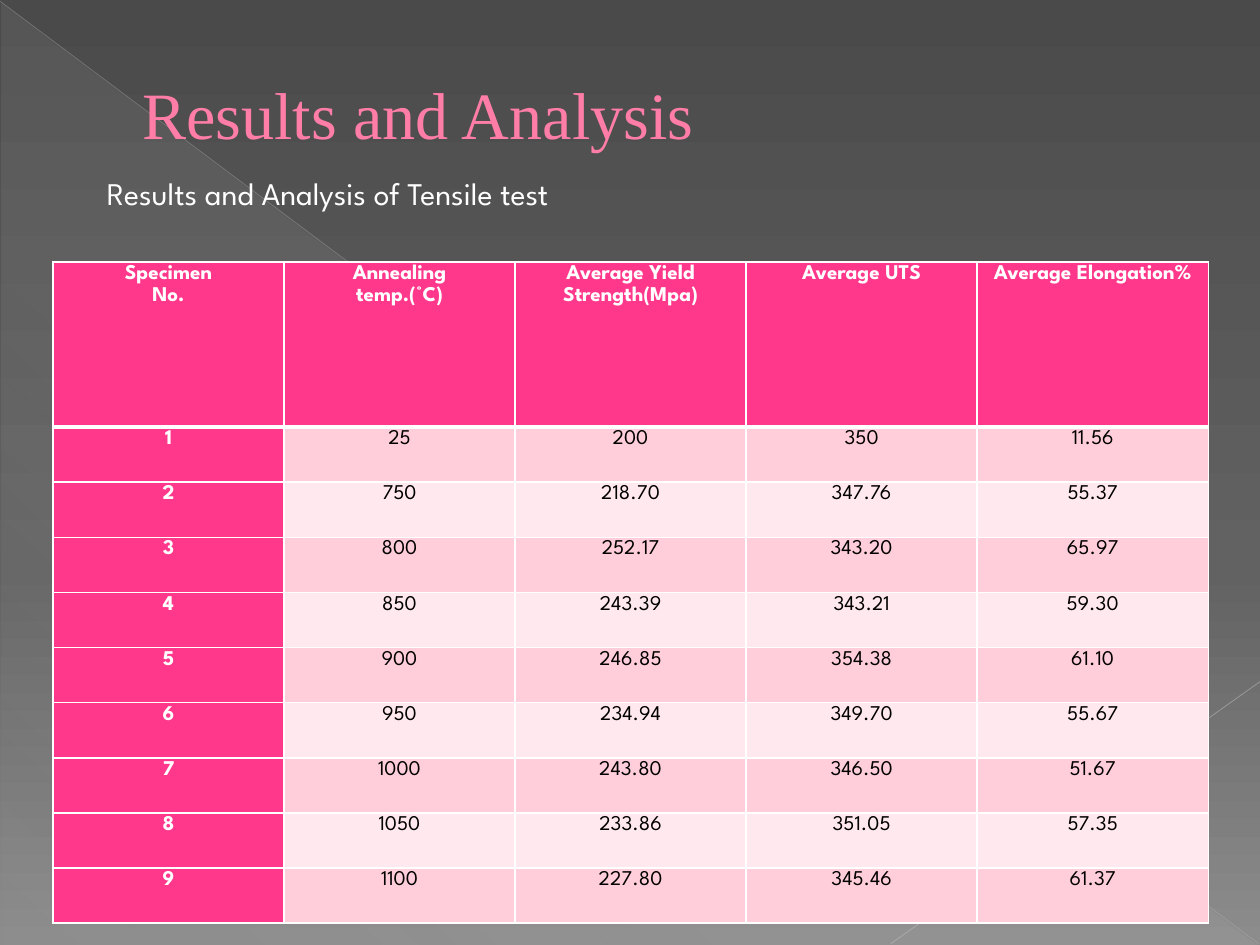
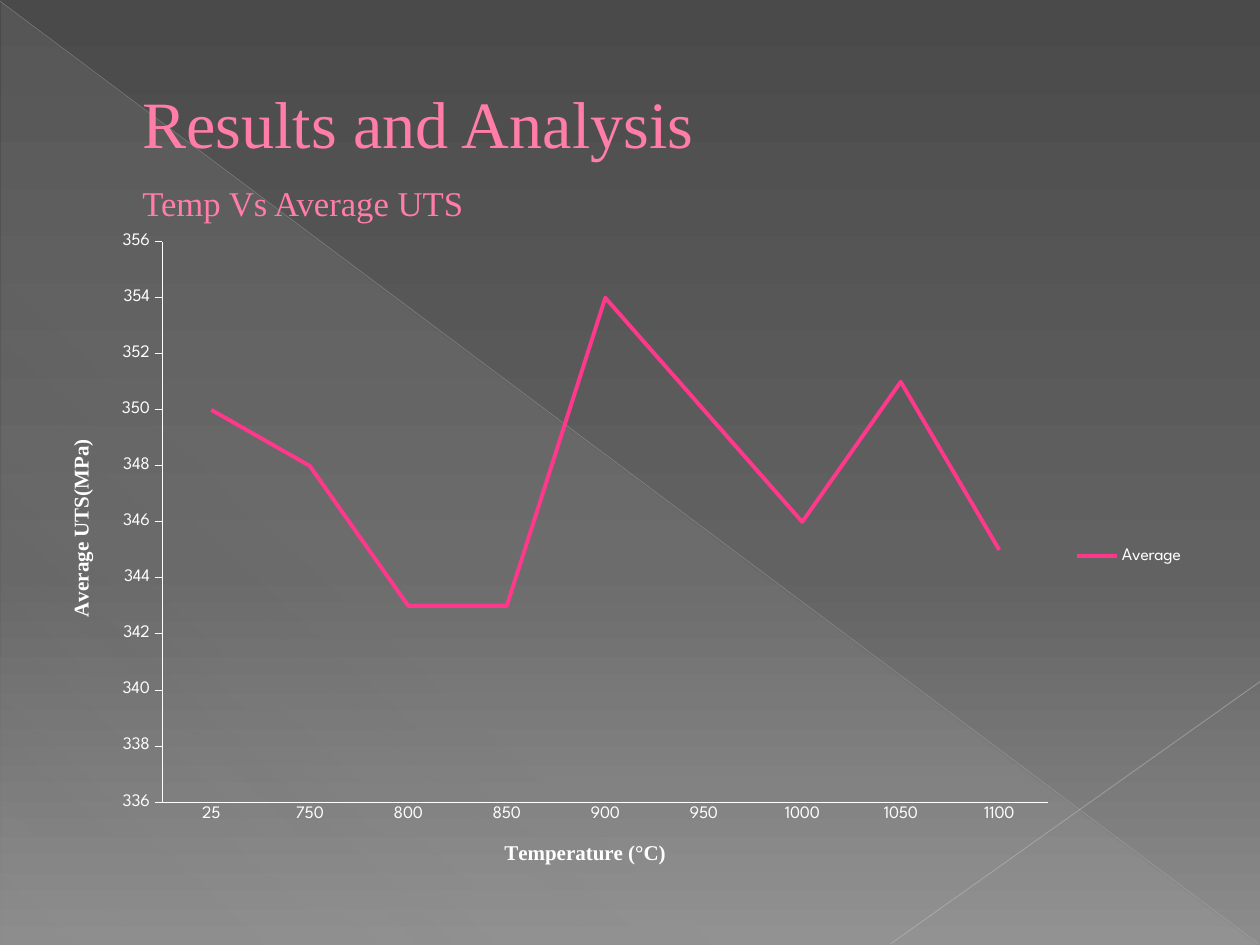
from lxml import etree
from pptx import Presentation
from pptx.chart.data import CategoryChartData
from pptx.dml.color import RGBColor
from pptx.enum.chart import (XL_CHART_TYPE, XL_LEGEND_POSITION, XL_MARKER_STYLE,
                             XL_TICK_MARK)
from pptx.enum.shapes import MSO_CONNECTOR, MSO_SHAPE
from pptx.enum.text import MSO_ANCHOR, MSO_AUTO_SIZE, PP_ALIGN
from pptx.oxml import parse_xml
from pptx.oxml.ns import nsdecls, qn
from pptx.util import Inches, Pt

STRAIGHT = MSO_CONNECTOR.STRAIGHT
RIGHT_TRIANGLE = MSO_SHAPE.RIGHT_TRIANGLE
LINE_CHART = XL_CHART_TYPE.LINE
LEGEND_RIGHT = XL_LEGEND_POSITION.RIGHT
NO_MARKER = XL_MARKER_STYLE.NONE
TICK_NONE, TICK_OUT = XL_TICK_MARK.NONE, XL_TICK_MARK.OUTSIDE
LEFT, CENTER = PP_ALIGN.LEFT, PP_ALIGN.CENTER
TOP, MIDDLE = MSO_ANCHOR.TOP, MSO_ANCHOR.MIDDLE
NO_FIT = MSO_AUTO_SIZE.NONE

COLORS = {
    "white": "FFFFFF", "black": "000000", "pink": "FF388C",
    "title": "FF7DA7", "title_outline": "B12761",
    "band_dark": "FFCEDA", "band_light": "FFE8EE",
    "bg_top": "4A4A4A", "bg_middle": "626262", "bg_bottom": "8C8C8C",
    "sheen": "D2D2D2", "diagonal": "BFBFBF", "corner": "C6C6C6",
}
RGB = {name: RGBColor.from_string(code) for name, code in COLORS.items()}
BODY_FONT, TITLE_FONT = "League Spartan", "Times New Roman"

HEADERS = ["Specimen\nNo.", "Annealing\ntemp.(°C)", "Average Yield\nStrength(Mpa)",
           "Average UTS", "Average Elongation%"]
SPECIMENS = [
    ("1", "25", "200", "350", "11.56"),
    ("2", "750", "218.70", "347.76", "55.37"),
    ("3", "800", "252.17", "343.20", "65.97"),
    ("4", "850", "243.39", "343.21", "59.30"),
    ("5", "900", "246.85", "354.38", "61.10"),
    ("6", "950", "234.94", "349.70", "55.67"),
    ("7", "1000", "243.80", "346.50", "51.67"),
    ("8", "1050", "233.86", "351.05", "57.35"),
    ("9", "1100", "227.80", "345.46", "61.37"),
]
HEADER_HEIGHT, TABLE_HEIGHT = 1.31, 5.25


def set_gradient(fill, owner, stops, angle):
    """Give fill, found inside the XML of owner, stops of (position %, colour, alpha %)."""
    fill.gradient()
    stop_xml = "".join(
        f'<a:gs pos="{pos * 1000}"><a:srgbClr val="{COLORS[color]}">'
        f'<a:alpha val="{alpha * 1000}"/></a:srgbClr></a:gs>'
        for pos, color, alpha in stops)
    old = owner.find(".//" + qn("a:gradFill"))
    old.getparent().replace(old, parse_xml(
        f'<a:gradFill {nsdecls("a")} rotWithShape="1"><a:gsLst>{stop_xml}</a:gsLst>'
        f'<a:lin ang="{angle * 60000}" scaled="0"/></a:gradFill>'))


def style_font(font, **values):
    """Set font attributes; color is a key of COLORS."""
    font.color.rgb = RGB[values.pop("color")]
    for name, value in values.items():
        setattr(font, name, value)


prs = Presentation()
prs.slide_width, prs.slide_height = Inches(10), Inches(7.5)
master = prs.slide_master
slides = [prs.slides.add_slide(prs.slide_layouts[5]) for _ in range(2)]
table_slide, chart_slide = slides

# Shared background, placed on the master
set_gradient(master.background.fill, master.element,
             [(0, "bg_top", 100), (60, "bg_middle", 100), (100, "bg_bottom", 100)], 90)
sheen = table_slide.shapes.add_shape(
    RIGHT_TRIANGLE, Inches(0.01), Inches(0.02), Inches(9.98), Inches(7.48))
sheen.shadow.inherit = False
sheen.line.fill.background()
set_gradient(sheen.fill, sheen.element,
             [(0, "sheen", 10), (70, "sheen", 8), (100, "sheen", 1)], 133)
backdrop = [sheen]
for ends, color, width, alpha in [
    ((0, 0.01, 9.99, 7.49), "diagonal", 0.39, 35),
    ((10, 5.41, 7.07, 7.49), "corner", 0.47, 45),
]:
    stroke = table_slide.shapes.add_connector(STRAIGHT, *map(Inches, ends))
    stroke.line.color.rgb = RGB[color]
    stroke.line.width = Pt(width)
    etree.SubElement(stroke.element.find(".//" + qn("a:srgbClr")),
                     qn("a:alpha"), val=str(alpha * 1000))
    etree.SubElement(stroke.element.spPr, qn("a:effectLst"))
    backdrop.append(stroke)
for position, part in enumerate(backdrop, start=2):
    master.shapes.element.insert(position, part.element)

# Titles
for slide, lines, bottom_inset in [
    (table_slide, [("Results and Analysis", 37.8)], 0.68),
    (chart_slide, [("Results and Analysis", 37.8), ("Temp Vs Average UTS", 19.8)], 0.05),
]:
    title = slide.shapes.title
    title.left, title.top, title.width, title.height = map(Inches, (0.5, 0.29, 9, 1.53))
    frame_format = {"vertical_anchor": MIDDLE, "word_wrap": True, "auto_size": NO_FIT,
                    "margin_left": Inches(0.63), "margin_bottom": Inches(bottom_inset)}
    for name, value in frame_format.items():
        setattr(title.text_frame, name, value)
    paragraph = title.text_frame.paragraphs[0]
    paragraph.alignment, paragraph.line_spacing = LEFT, 1.5
    for index, (text, size) in enumerate(lines):
        if index:
            paragraph.add_line_break()
        run = paragraph.add_run()
        run.text = text
        style_font(run.font, color="title", size=Pt(size), name=TITLE_FONT)
        run.font._element.insert(0, parse_xml(
            f'<a:ln {nsdecls("a")} w="6350"><a:solidFill>'
            f'<a:srgbClr val="{COLORS["title_outline"]}"/></a:solidFill></a:ln>'))

# Tensile test table
results = table_slide.shapes.add_table(
    len(SPECIMENS) + 1, len(HEADERS),
    Inches(0.42), Inches(2.08), Inches(9.17), Inches(TABLE_HEIGHT)).table
results.horz_banding = False
body_height = (TABLE_HEIGHT - HEADER_HEIGHT) / len(SPECIMENS)
for column in results.columns:
    column.width = Inches(9.17 / len(HEADERS))
for row_index, texts in enumerate([HEADERS] + SPECIMENS):
    results.rows[row_index].height = Inches(body_height if row_index else HEADER_HEIGHT)
    band = "band_dark" if row_index % 2 else "band_light"
    for column_index, text in enumerate(texts):
        heading = row_index == 0 or column_index == 0
        cell = results.cell(row_index, column_index)
        cell.text = text
        cell.vertical_anchor = TOP
        cell.margin_left = cell.margin_right = Inches(0.07)
        cell.margin_top = cell.margin_bottom = 0
        cell.fill.solid()
        cell.fill.fore_color.rgb = RGB["pink" if heading else band]
        for paragraph in cell.text_frame.paragraphs:
            paragraph.alignment, paragraph.line_spacing = CENTER, 1.15
            style_font(paragraph.runs[0].font, color="white" if heading else "black",
                       size=Pt(12), name=BODY_FONT, bold=heading)
        border_widths = {"lnL": 1, "lnR": 1, "lnT": 3 if row_index == 1 else 1,
                         "lnB": 3 if row_index == 0 else 1}
        for position, (side, width) in enumerate(border_widths.items()):
            cell._tc.tcPr.insert(position, parse_xml(
                f'<a:{side} {nsdecls("a")} w="{Pt(width)}"><a:solidFill>'
                f'<a:srgbClr val="{COLORS["white"]}"/></a:solidFill></a:{side}>'))

caption = table_slide.shapes.add_textbox(
    Inches(0.75), Inches(1.33), Inches(3.86), Inches(0.4)).text_frame
caption.word_wrap = True
caption.text = "Results and Analysis of Tensile test"
style_font(caption.paragraphs[0].runs[0].font, color="white", size=Pt(18), name=BODY_FONT)

# Temperature against UTS chart, in whole megapascals
uts_data = CategoryChartData()
uts_data.categories = [row[1] for row in SPECIMENS]
uts_data.add_series("Average", [round(float(row[3])) for row in SPECIMENS])
chart = chart_slide.shapes.add_chart(
    LINE_CHART, Inches(0.33), Inches(1.75), Inches(9.17), Inches(5.33), uts_data).chart
style_font(chart.font, color="white", size=Pt(10), name=BODY_FONT)
chart.has_title = False
chart.has_legend = True
chart.legend.position = LEGEND_RIGHT
chart.legend.include_in_layout = False
chart.plots[0].vary_by_categories = False
uts_series = chart.plots[0].series[0]
uts_series.smooth = False
uts_series.format.line.color.rgb = RGB["pink"]
uts_series.format.line.width = Pt(2.25)
uts_series.marker.style = NO_MARKER
for axis, name, tick in [
    (chart.category_axis, "Temperature (°C)", TICK_NONE),
    (chart.value_axis, "Average UTS(MPa)", TICK_OUT),
]:
    axis.has_major_gridlines = False
    axis.major_tick_mark, axis.minor_tick_mark = tick, TICK_NONE
    axis.format.line.color.rgb = RGB["white"]
    axis.format.line.width = Pt(0.5)
    axis.axis_title.text_frame.text = name
    style_font(axis.axis_title.text_frame.paragraphs[0].runs[0].font,
               color="white", size=Pt(12), name=TITLE_FONT, bold=True)
scale = {"minimum_scale": 336, "maximum_scale": 356, "major_unit": 2}
for name, value in scale.items():
    setattr(chart.value_axis, name, value)
chart.value_axis.tick_labels.number_format = "0"
chart.value_axis.tick_labels.number_format_is_linked = False

prs.save("out.pptx")
